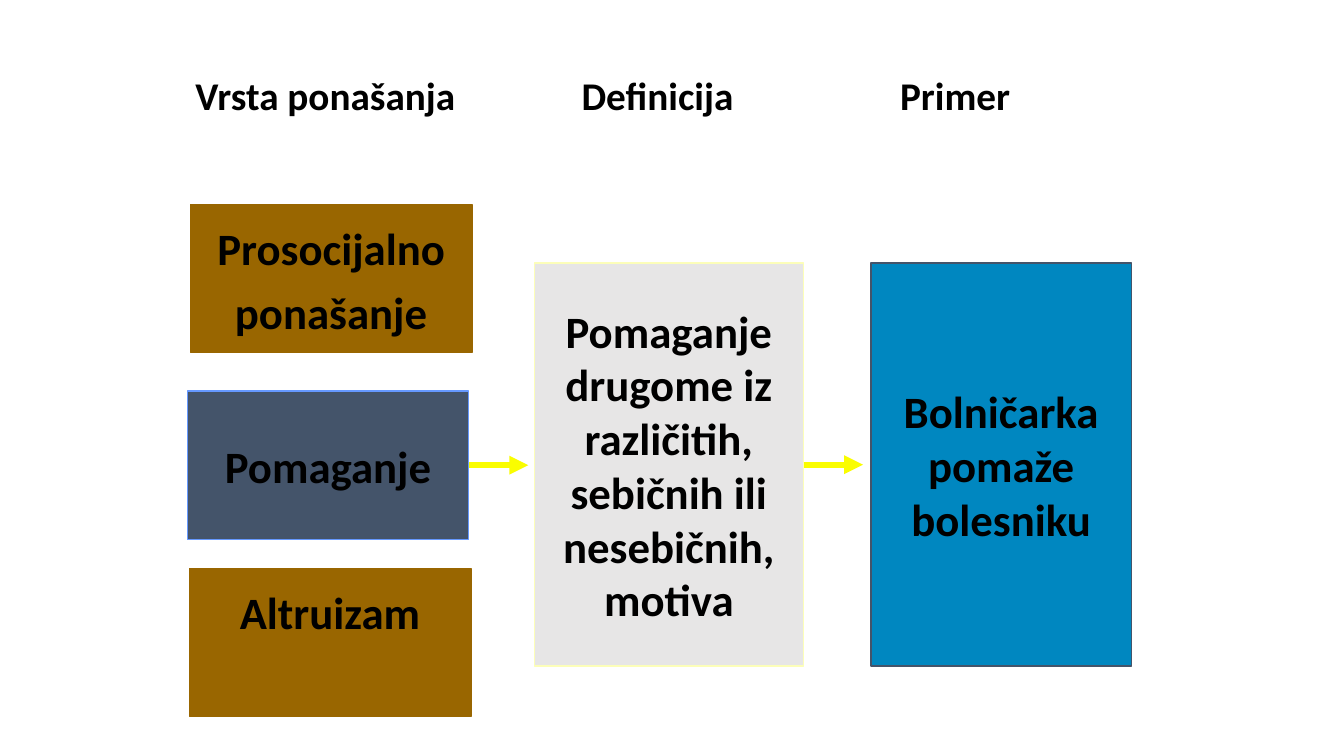
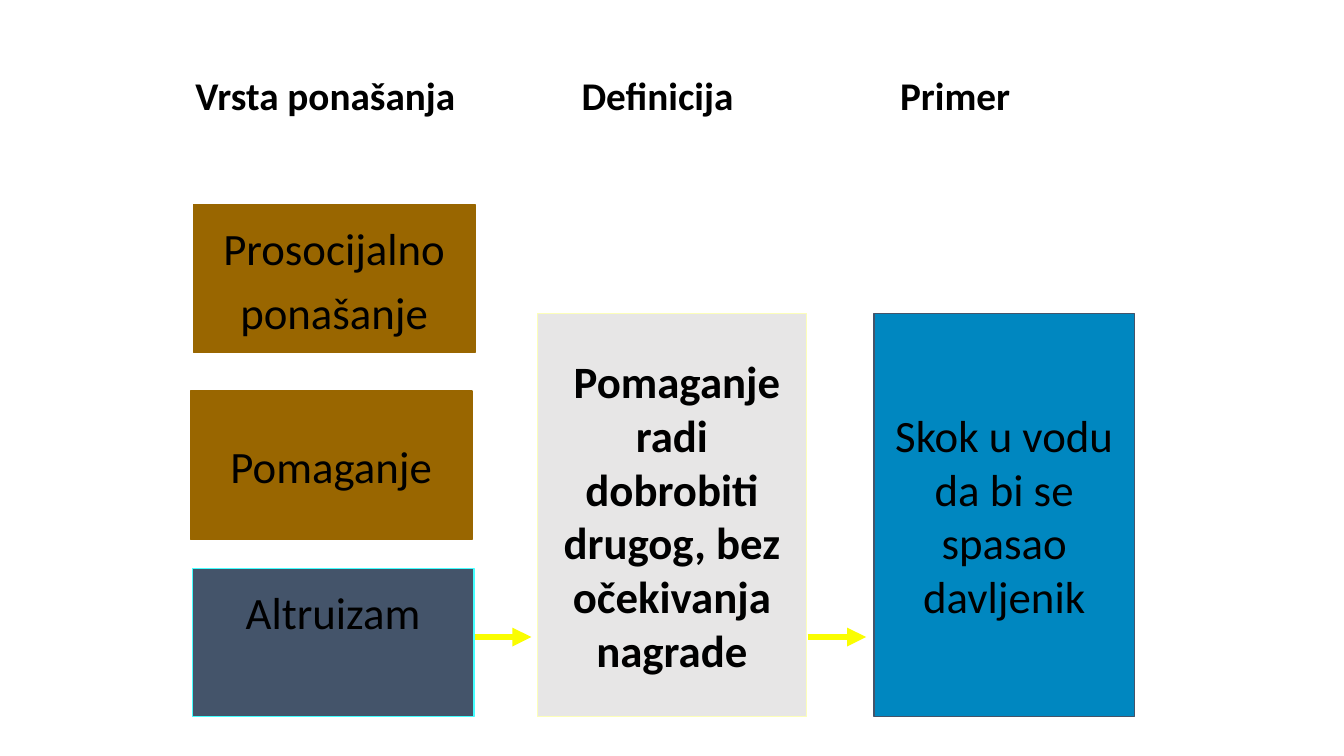
from dataclasses import dataclass
from typing import NamedTuple

from lxml import etree
from pptx import Presentation
from pptx import util as u
from pptx.dml.color import RGBColor
from pptx.enum import shapes, text
from pptx.oxml.ns import qn

PX = 9144


class Box(NamedTuple):
    left: int
    top: int
    width: int
    height: int

    def inner(self, left, top, width, height):
        return Box(self.left + left, self.top + top, width, height)

    def emu(self):
        return [value * PX for value in self]


@dataclass(frozen=True)
class Theme:
    font: str = "Calibri"
    ink: str = "000000"
    kind: str = "996600"
    active: str = "44546A"
    definition: str = "E7E6E6"
    definition_edge: str = "FCFEB9"
    example: str = "0087C0"
    example_edge: str = "44546A"
    arrow: str = "FAFD00"
    heading_size: int = 28
    body_size: int = 32
    edge_width: int = 1
    arrow_width: float = 4.5


THEME = Theme()
PAGE = Box(0, 0, 1333, 750)
HEADINGS = [
    ("Vrsta ponašanja", Box(184, 56, 294, 83), 0.9),
    ("Definicija", Box(567, 61, 217, 67), 1.0),
    ("Primer", Box(883, 61, 208, 67), 1.0),
]
KINDS = [
    ("Prosocijalno ponašanje", 3, 0, 1.2),
    ("Pomaganje", 0, 185, 1.8),
    ("Altruizam", 2, 361, 1.2),
]
BOARDS = [
    {
        "box": Box(186, 203, 936, 508),
        "active": 1,
        "active_edge": "6699FF",
        "bold": True,
        "detail_top": 58,
        "arrow_top": 258,
        "definition": "Pomaganje drugome iz različitih, sebičnih ili nesebičnih, motiva",
        "example": "Bolničarka pomaže bolesniku",
    },
    {
        "box": Box(189, 203, 936, 508),
        "active": 2,
        "active_edge": "45FFFF",
        "bold": False,
        "detail_top": 108,
        "arrow_top": 429,
        "definition": " Pomaganje radi dobrobiti drugog, bez očekivanja nagrade",
        "example": "Skok u vodu da bi se spasao davljenik",
    },
]


def rgb(value):
    return RGBColor.from_string(value)


def apply(target, formats):
    for name, value in formats.items():
        setattr(target, name, value)


def write(shape, words, size, bold, anchor, align, spacing=1.0):
    frame = shape.text_frame
    apply(frame, {
        "word_wrap": True,
        "vertical_anchor": anchor,
        "margin_left": 10 * PX,
        "margin_right": 10 * PX,
        "margin_top": 5 * PX,
        "margin_bottom": 5 * PX,
    })
    para = frame.paragraphs[0]
    apply(para, {"alignment": align, "line_spacing": spacing})
    span = para.add_run()
    span.text = words
    apply(span.font, {"name": THEME.font, "size": u.Pt(size), "bold": bold})
    span.font.color.rgb = rgb(THEME.ink)


def add_heading(page, box, words, spacing):
    heading = page.shapes.add_textbox(*box.emu())
    write(heading, words, THEME.heading_size, True,
          text.MSO_ANCHOR.MIDDLE, text.PP_ALIGN.LEFT, spacing)


def add_panel(page, box, words, fill, edge, bold,
              anchor=text.MSO_ANCHOR.MIDDLE, spacing=1.0):
    panel = page.shapes.add_shape(shapes.MSO_SHAPE.RECTANGLE, *box.emu())
    panel.shadow.inherit = False
    panel.fill.solid()
    panel.fill.fore_color.rgb = rgb(fill)
    panel.line.color.rgb = rgb(edge)
    panel.line.width = u.Pt(THEME.edge_width)
    write(panel, words, THEME.body_size, bold, anchor,
          text.PP_ALIGN.CENTER, spacing)
    return panel


def add_arrow(page, box, source):
    arrow = page.shapes.add_connector(
        shapes.MSO_CONNECTOR.STRAIGHT, box.left * PX, box.top * PX,
        (box.left + box.width) * PX, box.top * PX)
    arrow.line.color.rgb = rgb(THEME.arrow)
    arrow.line.width = u.Pt(THEME.arrow_width)
    etree.SubElement(arrow.line._get_or_add_ln(), qn("a:tailEnd"), type="triangle")
    etree.SubElement(arrow._element.spPr, qn("a:effectLst"))
    middle = source.top + source.height // 2
    if abs(middle - arrow.begin_y) <= 3 * PX:
        arrow.begin_connect(source, 3)
        arrow.end_y = arrow.begin_y


def add_kinds(page, box, active, active_edge, bold):
    panels = []
    for index, (words, left, top, spacing) in enumerate(KINDS):
        chosen = index == active
        fill = THEME.active if chosen else THEME.kind
        edge = active_edge if chosen else THEME.kind
        panels.append(add_panel(page, box.inner(left, top, 279, 147), words,
                                fill, edge, bold, text.MSO_ANCHOR.TOP, spacing))
    return panels[active]


def add_board(page, board):
    box = board["box"]
    kind = add_kinds(page, box, board["active"], board["active_edge"], board["bold"])
    definition = add_panel(
        page, box.inner(344, board["detail_top"], 267, 400),
        board["definition"], THEME.definition, THEME.definition_edge, True)
    add_panel(page, box.inner(678, board["detail_top"], 258, 400),
              board["example"], THEME.example, THEME.example_edge, board["bold"])
    add_arrow(page, box.inner(282, board["arrow_top"], 56, 0), kind)
    add_arrow(page, box.inner(612, board["arrow_top"], 58, 0), definition)


def main():
    deck = Presentation()
    apply(deck, {"slide_width": PAGE.width * PX, "slide_height": PAGE.height * PX})
    for board in BOARDS:
        page = deck.slides.add_slide(deck.slide_layouts[6])
        for words, box, spacing in HEADINGS:
            add_heading(page, box, words, spacing)
        add_board(page, board)
    deck.save("out.pptx")


if __name__ == "__main__":
    main()
